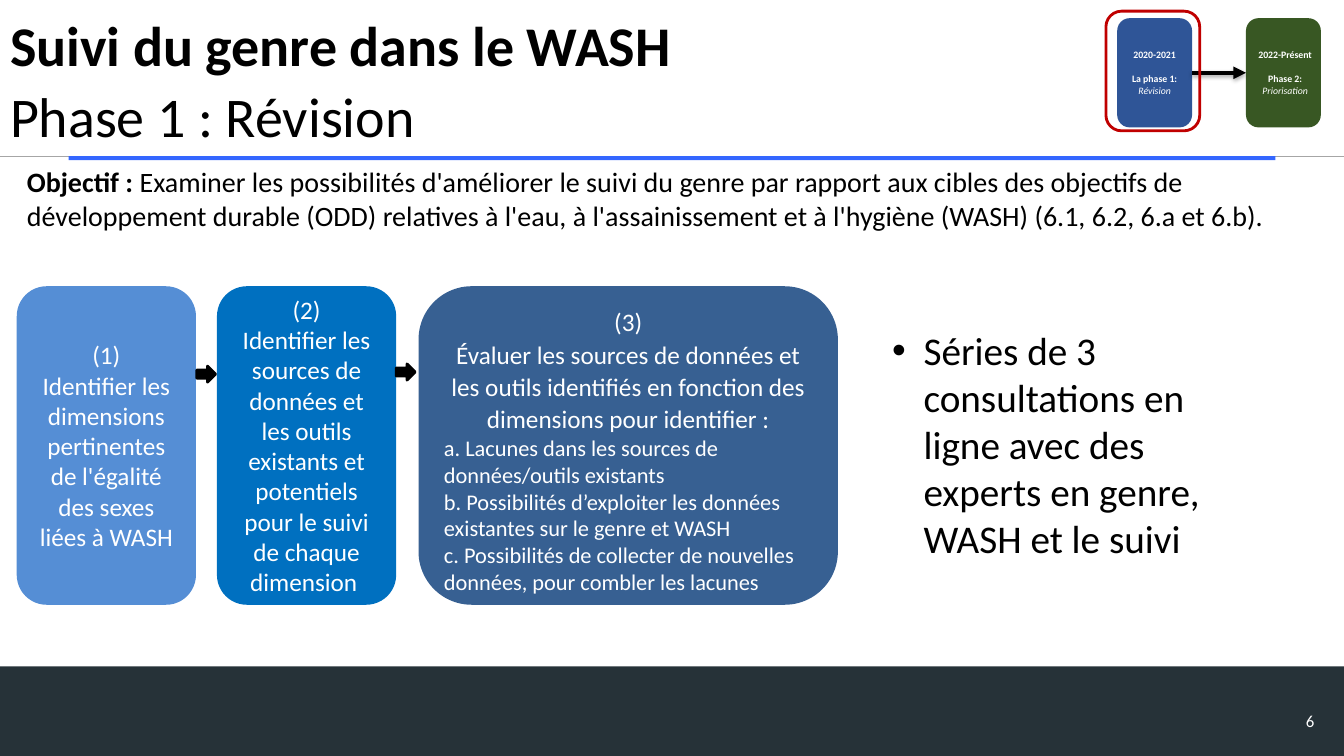
from lxml import etree
from pptx import Presentation
from pptx.dml.color import RGBColor
from pptx.enum.shapes import MSO_CONNECTOR, MSO_SHAPE
from pptx.enum.text import MSO_ANCHOR, MSO_AUTO_SIZE, PP_ALIGN
from pptx.oxml import parse_xml
from pptx.oxml.ns import nsdecls, qn
from pptx.util import Pt

RECT, ROUND, ARROW = MSO_SHAPE.RECTANGLE, MSO_SHAPE.ROUNDED_RECTANGLE, MSO_SHAPE.RIGHT_ARROW
STRAIGHT = MSO_CONNECTOR.STRAIGHT
TOP, MIDDLE = MSO_ANCHOR.TOP, MSO_ANCHOR.MIDDLE
LEFT, CENTER, RIGHT = PP_ALIGN.LEFT, PP_ALIGN.CENTER, PP_ALIGN.RIGHT
NO_FIT = MSO_AUTO_SIZE.NONE
BLACK, WHITE = "000000", "FFFFFF"
SHADOW = (
    f'<a:effectLst {nsdecls("a")}><a:outerShdw blurRad="40000" dist="23000" dir="5400000" rotWithShape="0">'
    '<a:srgbClr val="000000"><a:alpha val="35000"/></a:srgbClr></a:outerShdw></a:effectLst>'
)


def color(text):
    return RGBColor.from_string(text)


class Deck:
    font = "Calibri"

    def __init__(self, wide, high):
        self.file = Presentation()
        self.file.slide_width, self.file.slide_height = Pt(wide), Pt(high)
        self.slide = self.file.slides.add_slide(self.file.slide_layouts[3])
        self.items = self.slide.shapes

    def words(self, frame, lines, size, ink=BLACK, align=LEFT, anchor=TOP):
        frame.word_wrap = True
        frame.auto_size = NO_FIT
        frame.vertical_anchor = anchor
        for i, line in enumerate(lines):
            para = frame.paragraphs[0] if i == 0 else frame.add_paragraph()
            for text, *bold in line["runs"]:
                run = para.add_run()
                run.text = text
                if bold:
                    run.font.bold = bold[0]
            self.mark(para, line.get("bullet"))
            para.alignment = line.get("align", align)
            para.space_before = Pt(line.get("before", 0))
            para.space_after = Pt(line.get("after", 0))
            para.line_spacing = line.get("lead", 1.0)
            font = para.font
            font.name, font.size = self.font, Pt(line.get("size", size))
            font.color.rgb = color(ink)
            if "bold" in line:
                font.bold = line["bold"]
            if "italic" in line:
                font.italic = line["italic"]

    def mark(self, para, bullet):
        props = para._p.get_or_add_pPr()
        hang = Pt(22.5) if bullet else 0
        props.set("marL", str(hang))
        props.set("indent", str(-hang))
        if bullet:
            etree.SubElement(props, qn("a:buChar")).set("char", bullet)
        else:
            etree.SubElement(props, qn("a:buNone"))

    def holder(self, index, box, lines, size, anchor=TOP):
        item = self.slide.placeholders[index]
        item.left, item.top, item.width, item.height = map(Pt, box)
        self.words(item.text_frame, lines, size, anchor=anchor)

    def label(self, box, lines, size, ink, align, anchor=TOP):
        item = self.items.add_textbox(*map(Pt, box))
        self.words(item.text_frame, lines, size, ink, align, anchor)

    def shape(self, kind, box, fill=None, edge=None):
        item = self.items.add_shape(kind, *map(Pt, box))
        item.shadow.inherit = False
        if fill:
            item.fill.solid()
            item.fill.fore_color.rgb = color(fill)
        else:
            item.fill.background()
        if edge:
            item.line.color.rgb = color(edge)
            item.line.width = Pt(2)
        else:
            item.line.fill.background()
        return item

    def line(self, ends, ink, width):
        item = self.items.add_connector(STRAIGHT, *map(Pt, ends))
        item.line.color.rgb = color(ink)
        item.line.width = Pt(width)
        etree.SubElement(item._element.spPr, qn("a:effectLst"))
        return item

    def link(self, start, end):
        item = self.line((0, 0, 0, 0), BLACK, 3)
        item.begin_connect(start, 3)
        item.end_connect(end, 1)
        props = item._element.spPr
        etree.SubElement(props.find(qn("a:ln")), qn("a:tailEnd")).set("type", "triangle")
        props.replace(props.find(qn("a:effectLst")), parse_xml(SHADOW))


def plain(text, **style):
    return {"runs": [(text,)], **style}


def main():
    deck = Deck(960, 540)
    deck.shape(RECT, (0, 476, 960, 64), "263238")
    deck.line((0, 111.5, 960, 111.5), "A6A6A6", 0.5)
    deck.shape(RECT, (49, 111.5, 862, 3), "3366FF")

    deck.holder(0, (0, 0, 599, 114), [
        plain("Suivi du genre dans le WASH", bold=True, after=3),
        plain("Phase 1 : Révision", bold=False, after=3),
    ], 40, MIDDLE)
    deck.holder(1, (12, 114, 924, 356), [{"runs": [
        ("Objectif : ", True),
        ("Examiner les possibilités d'améliorer le suivi du genre par rapport aux cibles des objectifs de "
         "développement durable (ODD) relatives à l'eau, à l'assainissement et à l'hygiène (WASH) "
         "(6.1, 6.2, 6.a et 6.b).", False),
    ]}], 20)
    deck.holder(2, (630, 229.5, 276, 177), [
        plain("Séries de 3 consultations en ligne avec des experts en genre, WASH et le suivi", bullet="•"),
    ], 28)
    deck.label((722, 500.5, 224, 29), [plain("6")], 12, WHITE, RIGHT, MIDDLE)

    phases = [
        (798, 53.5, "2F5597", "2020-2021", "La phase 1:", "Révision"),
        (890, 56, "385723", "2022-Présent", "Phase 2:", "Priorisation"),
    ]
    cards = []
    for left, wide, fill, years, name, goal in phases:
        cards.append(deck.shape(ROUND, (left, 13, 53.5, 78), fill))
        deck.label((left, 31.5, wide, 41), [
            plain(years, bold=True),
            plain(name, bold=True, before=8.5),
            plain(goal, italic=True),
        ], 7, WHITE, CENTER)
    deck.link(*cards)
    deck.shape(ROUND, (790, 8, 67, 85.5), edge="C00000")

    steps = [
        (12, 128, "558ED5", MIDDLE, [
            plain("Identifier les dimensions pertinentes de l'égalité des sexes liées à WASH"),
        ]),
        (155, 128, "0070C0", MIDDLE, [
            plain("Identifier les sources de données et les outils existants et potentiels "
                  "pour le suivi de chaque dimension "),
        ]),
        (299, 299.5, "376092", TOP, [
            plain("Évaluer les sources de données et les outils identifiés en fonction "
                  "des dimensions pour identifier :", lead=1.07),
            *(plain(text, size=16, align=LEFT) for text in (
                "a. Lacunes dans les sources de données/outils existants",
                "b. Possibilités d’exploiter les données existantes sur le genre et WASH",
                "c. Possibilités de collecter de nouvelles données, pour combler les lacunes",
            )),
        ]),
    ]
    for count, (left, wide, fill, anchor, lines) in enumerate(steps, 1):
        card = deck.shape(ROUND, (left, 204.5, wide, 227.5), fill)
        deck.words(card.text_frame, [plain(f"({count})"), *lines], 18, WHITE, CENTER, anchor)
    for left, top in ((140.5, 261.5), (283, 260)):
        deck.shape(ARROW, (left, top, 13.5, 11.5), BLACK, BLACK)

    deck.file.save("out.pptx")


if __name__ == "__main__":
    main()
